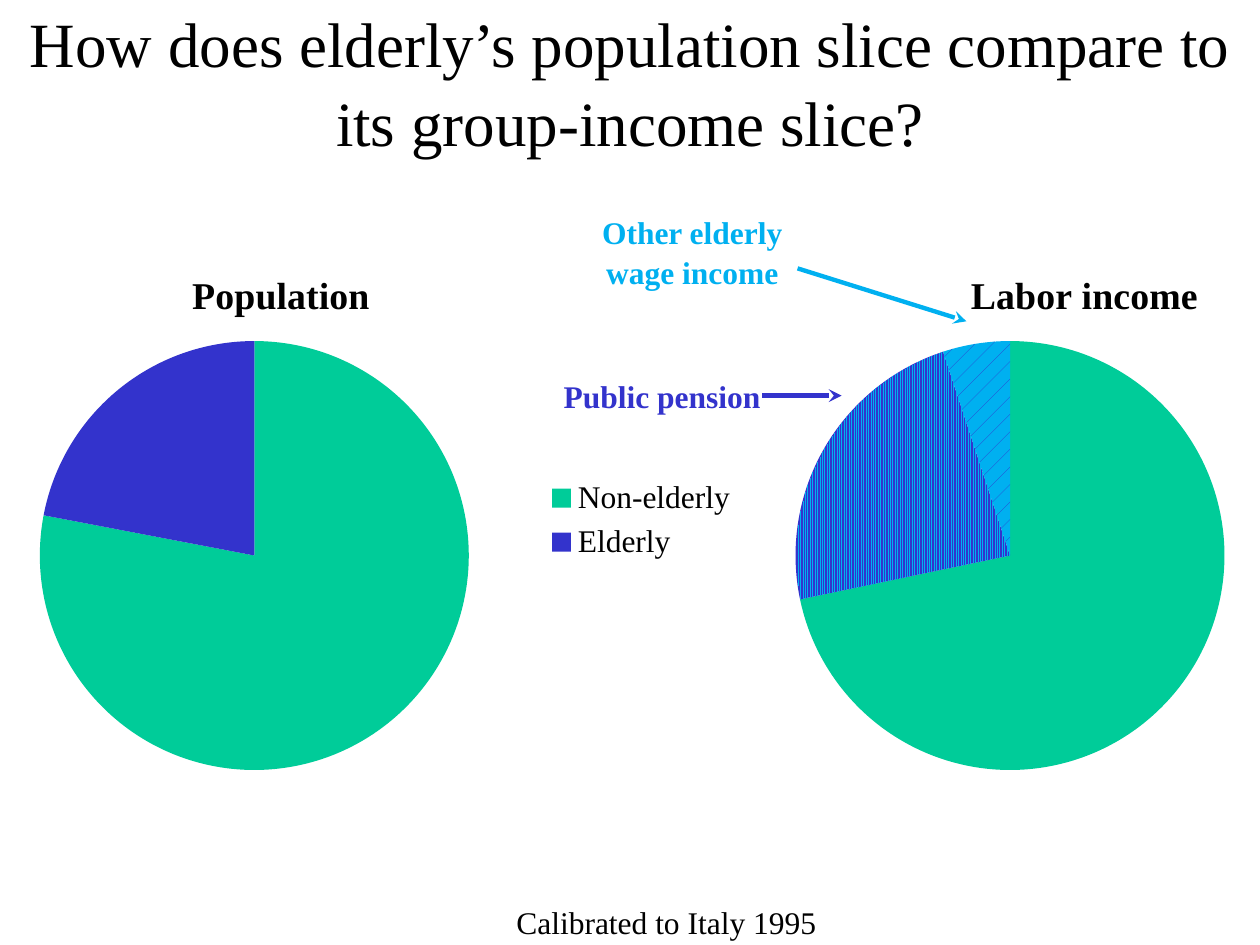
from lxml.etree import SubElement
from pptx import Presentation
from pptx.chart.data import CategoryChartData
from pptx.dml.color import RGBColor
from pptx.enum.chart import XL_CHART_TYPE, XL_LEGEND_POSITION
from pptx.enum.dml import MSO_PATTERN
from pptx.enum.shapes import MSO_CONNECTOR
from pptx.enum.text import MSO_ANCHOR, MSO_AUTO_SIZE, PP_ALIGN
from pptx.oxml import parse_xml
from pptx.oxml.ns import nsdecls, qn
from pptx.util import Inches, Pt

FONT = "Times New Roman"
BLACK, GREEN, INDIGO, SKY = "000000", "00CC99", "3333CC", "00B0F0"


def color(value):
    return RGBColor.from_string(value)


def style_font(font, size, fill, bold=False):
    font.name = FONT
    font.size = Pt(size)
    font.bold = bold
    font.color.rgb = color(fill)


def write_text(box, text, size, fill, bold=False, align=PP_ALIGN.CENTER):
    para = box.text_frame.paragraphs[0]
    para.text = text
    para.alignment = align
    para.line_spacing = 1.05
    style_font(para.runs[0].font, size, fill, bold)


def add_title(page, text):
    title = page.shapes.title
    title.left, title.top = Inches(0), Inches(0.01)
    title.width, title.height = Inches(10), Inches(1.25)
    write_text(title, text, 36, BLACK)
    title.text_frame.auto_size = MSO_AUTO_SIZE.NONE
    title.text_frame.vertical_anchor = MSO_ANCHOR.MIDDLE


def add_text(shapes, place, text, fill, bold=False, wrap=True, align=PP_ALIGN.CENTER):
    box = shapes.add_textbox(*map(Inches, place))
    box.text_frame.word_wrap = wrap
    box.text_frame.auto_size = MSO_AUTO_SIZE.SHAPE_TO_FIT_TEXT
    write_text(box, text, 18, fill, bold, align)


def add_arrow(shapes, start, end, fill):
    arrow = shapes.add_connector(MSO_CONNECTOR.STRAIGHT, *map(Inches, start + end))
    arrow.line.color.rgb = color(fill)
    arrow.line.width = Pt(2.5)
    SubElement(arrow.line._get_or_add_ln(), qn("a:tailEnd"), type="stealth")
    SubElement(arrow._element.spPr, qn("a:effectLst"))


def add_callout(page, text, place, start, end, fill):
    group = page.shapes.add_group_shape()
    add_arrow(group.shapes, start, end, fill)
    add_text(group.shapes, place, text, fill, bold=True)


def set_layout(element, index, **settings):
    for old in element.findall(qn("c:layout")):
        element.remove(old)
    layout = parse_xml(f"<c:layout {nsdecls('c')}><c:manualLayout/></c:layout>")
    for name, value in settings.items():
        SubElement(layout[0], qn(f"c:{name}"), val=str(value))
    element.insert(index, layout)


def fill_slice(fill, style):
    if isinstance(style, str):
        fill.solid()
        fill.fore_color.rgb = color(style)
    else:
        pattern, front, back = style
        fill.patterned()
        fill.pattern = pattern
        fill.fore_color.rgb = color(front)
        fill.back_color.rgb = color(back)


def add_pie(page, left, name, slices, pie_left):
    data = CategoryChartData()
    data.categories = [category for category, value, style in slices]
    data.add_series(name, [value for category, value, style in slices])
    place = map(Inches, (left, 1.92, 6.08, 4.33))
    chart = page.shapes.add_chart(XL_CHART_TYPE.PIE, *place, data).chart
    style_font(chart.font, 18, BLACK)
    chart.has_legend = False
    chart.has_title = True
    chart.chart_title.text_frame.text = name
    span = chart.chart_title.text_frame.paragraphs[0].runs[0]
    style_font(span.font, 21.6, BLACK, bold=True)
    set_layout(chart.chart_title._element, 1, xMode="edge", yMode="edge", x=0.27, y=0.04)
    plot_area = chart._chartSpace.chart.plotArea
    set_layout(plot_area, 0, layoutTarget="inner", xMode="edge", yMode="edge",
               x=pie_left, y=0.18, w=0.56, h=0.79)
    plot = chart.plots[0]
    plot.vary_by_categories = True
    for index, (category, value, style) in enumerate(slices):
        slice_format = plot.series[0].points[index].format
        fill_slice(slice_format.fill, style)
        slice_format.line.fill.background()
    return chart


def add_legend(chart):
    chart.has_legend = True
    legend = chart.legend
    legend.position = XL_LEGEND_POSITION.RIGHT
    legend.include_in_layout = False
    style_font(legend.font, 18, BLACK)
    set_layout(legend._element, 1, xMode="edge", yMode="edge", x=0.74, y=0.42, w=0.25, h=0.18)


def main():
    deck = Presentation()
    deck.slide_width, deck.slide_height = Inches(10), Inches(7.5)
    page = deck.slides.add_slide(deck.slide_layouts[5])
    add_title(page, "How does elderly’s population slice compare to its group-income slice?")
    population = add_pie(page, -0.17, "Population", [
        ("Non-elderly", 78, GREEN),
        ("Elderly", 22, INDIGO),
    ], 0.08)
    add_legend(population)
    add_pie(page, 6.01, "Labor income", [
        ("Non-elderly", 71, GREEN),
        ("Elderly - SS", 23, (MSO_PATTERN.LIGHT_VERTICAL, SKY, INDIGO)),
        ("Elderly - wages", 5, (MSO_PATTERN.PERCENT_5, INDIGO, SKY)),
    ], 0.05)
    add_text(page.shapes, (4, 7.1, 2.61, 0.4), "Calibrated to Italy 1995", BLACK,
             wrap=False, align=PP_ALIGN.LEFT)
    add_callout(page, "Other elderly wage income", (4.41, 1.63, 2.17, 0.71),
                (6.33, 2.13), (7.67, 2.55), SKY)
    add_callout(page, "Public pension", (4.17, 2.93, 2.17, 0.4),
                (6.05, 3.14), (6.68, 3.14), INDIGO)
    deck.save("out.pptx")


if __name__ == "__main__":
    main()
